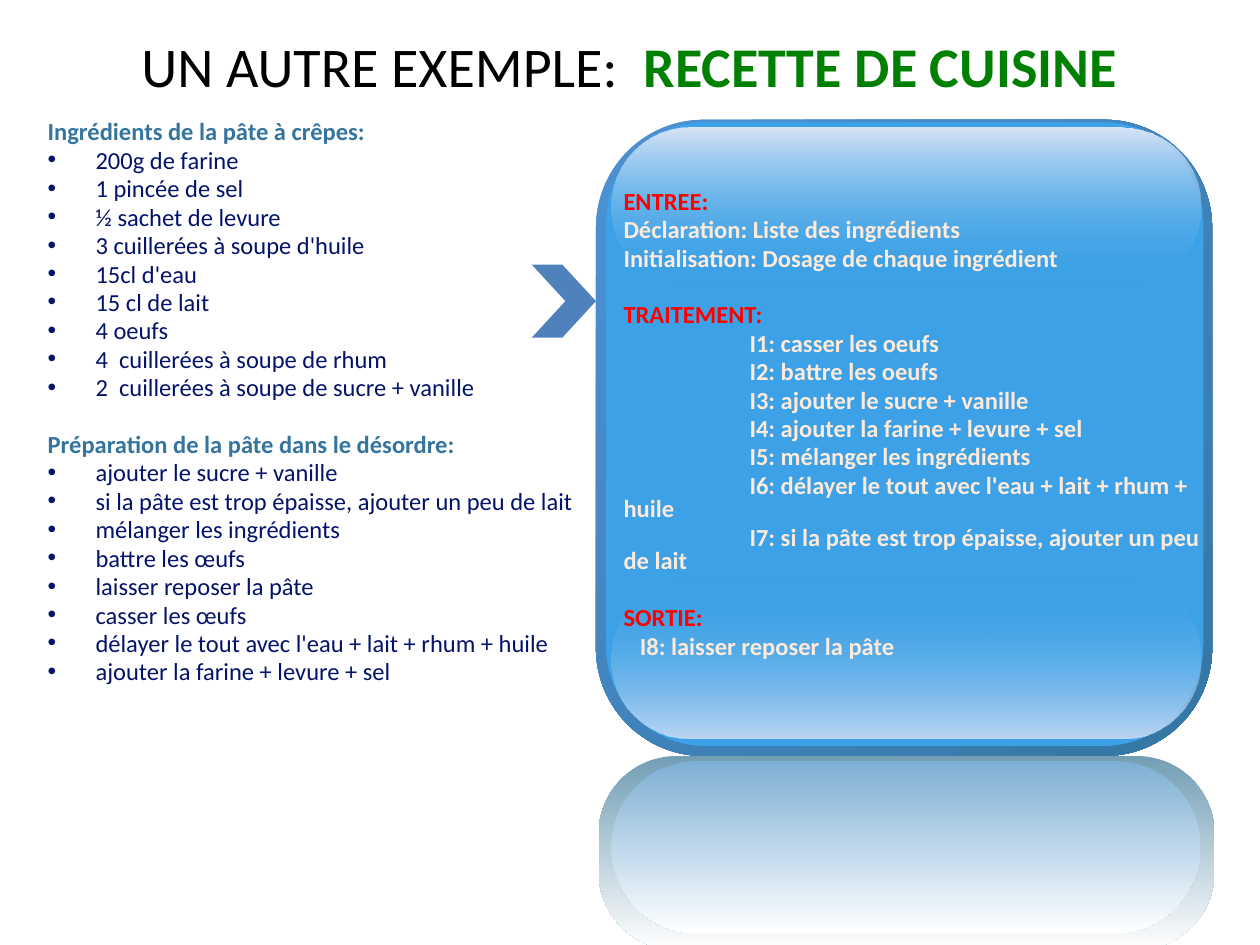
from lxml import etree
from pptx import Presentation
from pptx.dml.color import RGBColor
from pptx.enum import shapes, text
from pptx.oxml import ns
from pptx.util import Inches, Pt

FONT = "Calibri"
BLACK = RGBColor(0x00, 0x00, 0x00)
GREEN = RGBColor(0x00, 0x80, 0x00)
TEAL = RGBColor(0x35, 0x75, 0x9D)
NAVY = RGBColor(0x03, 0x13, 0x6A)
RED = RGBColor(0xFF, 0x00, 0x00)
CREAM = RGBColor(0xFD, 0xEA, 0xDA)
STEEL = RGBColor(0x4F, 0x81, 0xBD)
BLUE = RGBColor(0x3C, 0xA1, 0xE6)
BORDER_LIGHT = RGBColor(0x4E, 0x91, 0xD4)
BORDER_DARK = RGBColor(0x34, 0x77, 0xA4)
GLOW = RGBColor(0xBD, 0xD6, 0xF3)
SHINE = RGBColor(0xD7, 0xE5, 0xF7)
REFLECTED_BORDER = RGBColor(0x72, 0x9E, 0xB4)
REFLECTED_FACE = RGBColor(0x7D, 0xAF, 0xD4)
WHITE = RGBColor(0xFF, 0xFF, 0xFF)

TITLE = [("UN AUTRE EXEMPLE:  ", BLACK, False), ("RECETTE DE CUISINE", GREEN, True)]

RECIPE = [
    ("Ingrédients de la pâte à crêpes:", [
        "200g de farine",
        "1 pincée de sel",
        "½ sachet de levure",
        "3 cuillerées à soupe d'huile",
        "15cl d'eau",
        "15 cl de lait",
        "4 oeufs",
        "4  cuillerées à soupe de rhum",
        "2  cuillerées à soupe de sucre + vanille",
    ]),
    ("Préparation de la pâte dans le désordre:", [
        "ajouter le sucre + vanille",
        "si la pâte est trop épaisse, ajouter un peu de lait",
        "mélanger les ingrédients",
        "battre les œufs",
        "laisser reposer la pâte",
        "casser les œufs",
        "délayer le tout avec l'eau + lait + rhum + huile",
        "ajouter la farine + levure + sel",
    ]),
]

ALGORITHM = [
    ("ENTREE:", "plain", [
        "Déclaration: Liste des ingrédients",
        "Initialisation: Dosage de chaque ingrédient",
    ]),
    ("TRAITEMENT:", "tab", [
        "I1: casser les oeufs",
        "I2: battre les oeufs",
        "I3: ajouter le sucre + vanille",
        "I4: ajouter la farine + levure + sel",
        "I5: mélanger les ingrédients",
        "I6: délayer le tout avec l'eau + lait + rhum + huile",
        "I7: si la pâte est trop épaisse, ajouter un peu de lait",
    ]),
    ("SORTIE:", "indent", ["I8: laisser reposer la pâte"]),
]

# box, corner adjustment, gradient stops (colour, opacity %), angle
PANEL = [
    ((4.73, 0.95, 4.89, 5.05), 0.175, [(BORDER_LIGHT, 100), (BORDER_DARK, 100)], 45),
    ((4.81, 0.97, 4.74, 4.95), 0.167, [(BLUE, 100)], None),
    ((4.85, 4.61, 4.68, 1.25), 0.5, [(BLUE, 0), (GLOW, 100)], 90),
    ((4.85, 1.01, 4.68, 1.25), 0.5, [(SHINE, 100), (BLUE, 0)], 90),
    ((4.75, 6.0, 4.89, 1.54), 0.404, [(REFLECTED_BORDER, 100), (WHITE, 100)], 90),
    ((4.85, 6.04, 4.68, 1.37), 0.5, [(REFLECTED_FACE, 100), (WHITE, 100)], 90),
]


def child(parent, tag, **attributes):
    return etree.SubElement(parent, ns.qn(tag), {k: str(v) for k, v in attributes.items()})


def add_run(paragraph, words, size, color, bold):
    run = paragraph.add_run()
    run.text = words
    run.font.name, run.font.size, run.font.bold = FONT, Pt(size), bold
    run.font.color.rgb = color


def add_preset(parent, preset, box, adjustment):
    shape = parent.add_shape(preset, *map(Inches, box))
    shape.adjustments[0] = adjustment
    shape.shadow.inherit = False
    shape.line.fill.background()
    return shape


def fill_gradient(shape, stops, angle):
    """Linear gradient with per-stop opacity; angle is clockwise degrees."""
    gradient = etree.Element(ns.qn("a:gradFill"), rotWithShape="1")
    stop_list = child(gradient, "a:gsLst")
    for index, (color, opacity) in enumerate(stops):
        stop = child(stop_list, "a:gs", pos=index * 100000)
        rgb = child(stop, "a:srgbClr", val=color)
        if opacity < 100:
            child(rgb, "a:alpha", val=opacity * 1000)
    child(gradient, "a:lin", ang=angle * 60000, scaled=0)
    shape.fill.background()
    properties = shape.fill._xPr
    properties.replace(properties.find(ns.qn("a:noFill")), gradient)


def set_layout(paragraph, style):
    properties = paragraph._p.get_or_add_pPr()
    if style == "bullet":
        properties.set("marL", str(Inches(0.38)))
        properties.set("indent", str(Inches(-0.38)))
        child(properties, "a:buFont", typeface="Arial")
        child(properties, "a:buChar", char="•")
    elif style == "tab":
        child(child(properties, "a:tabLst"), "a:tab", pos=Inches(1), algn="l")
    elif style == "indent":
        properties.set("marL", str(Inches(0.13)))


def add_sections(slide, box, sections, heading_color, color, bold):
    frame = slide.shapes.add_textbox(*map(Inches, box)).text_frame
    frame.word_wrap = True
    first = True
    for heading, style, items in sections:
        rows = [(heading, "heading")] + [(item, style) for item in items]
        for words, kind in rows:
            paragraph = frame.paragraphs[0] if first else frame.add_paragraph()
            paragraph.line_spacing = 0.8
            if not first:
                paragraph.space_before = Pt(19 if kind == "heading" else 2.8)
            first = False
            set_layout(paragraph, kind)
            if kind == "heading":
                add_run(paragraph, words, 14, heading_color, True)
            else:
                prefix = "\t" if kind == "tab" else ""
                add_run(paragraph, prefix + words, 14, color, bold)


def add_title(slide):
    title = slide.shapes.title
    title.left, title.top, title.width, title.height = map(Inches, (0.35, 0.13, 9.29, 0.78))
    frame = title.text_frame
    frame.auto_size = text.MSO_AUTO_SIZE.NONE
    frame.vertical_anchor = text.MSO_ANCHOR.MIDDLE
    frame.paragraphs[0].alignment = text.PP_ALIGN.CENTER
    for words, color, bold in TITLE:
        add_run(frame.paragraphs[0], words, 32, color, bold)


def main():
    presentation = Presentation()
    presentation.slide_width, presentation.slide_height = Inches(10), Inches(7.5)
    slide = presentation.slides.add_slide(presentation.slide_layouts[5])
    add_title(slide)

    recipe = [(heading, "bullet", items) for heading, items in RECIPE]
    add_sections(slide, (0.28, 0.92, 4.41, 4.8), recipe, TEAL, NAVY, False)

    kinds = shapes.MSO_SHAPE
    chevron = add_preset(slide.shapes, kinds.CHEVRON, (4.22, 2.1, 0.51, 0.58), 0.525)
    chevron.fill.solid()
    chevron.fill.fore_color.rgb = STEEL

    panel = slide.shapes.add_group_shape()
    for box, corner, stops, angle in PANEL:
        layer = add_preset(panel.shapes, kinds.ROUNDED_RECTANGLE, box, corner)
        if angle is None:
            layer.fill.solid()
            layer.fill.fore_color.rgb = stops[0][0]
        else:
            fill_gradient(layer, stops, angle)

    add_sections(slide, (4.85, 1.47, 4.79, 4.76), ALGORITHM, RED, CREAM, True)
    presentation.save("out.pptx")


if __name__ == "__main__":
    main()
